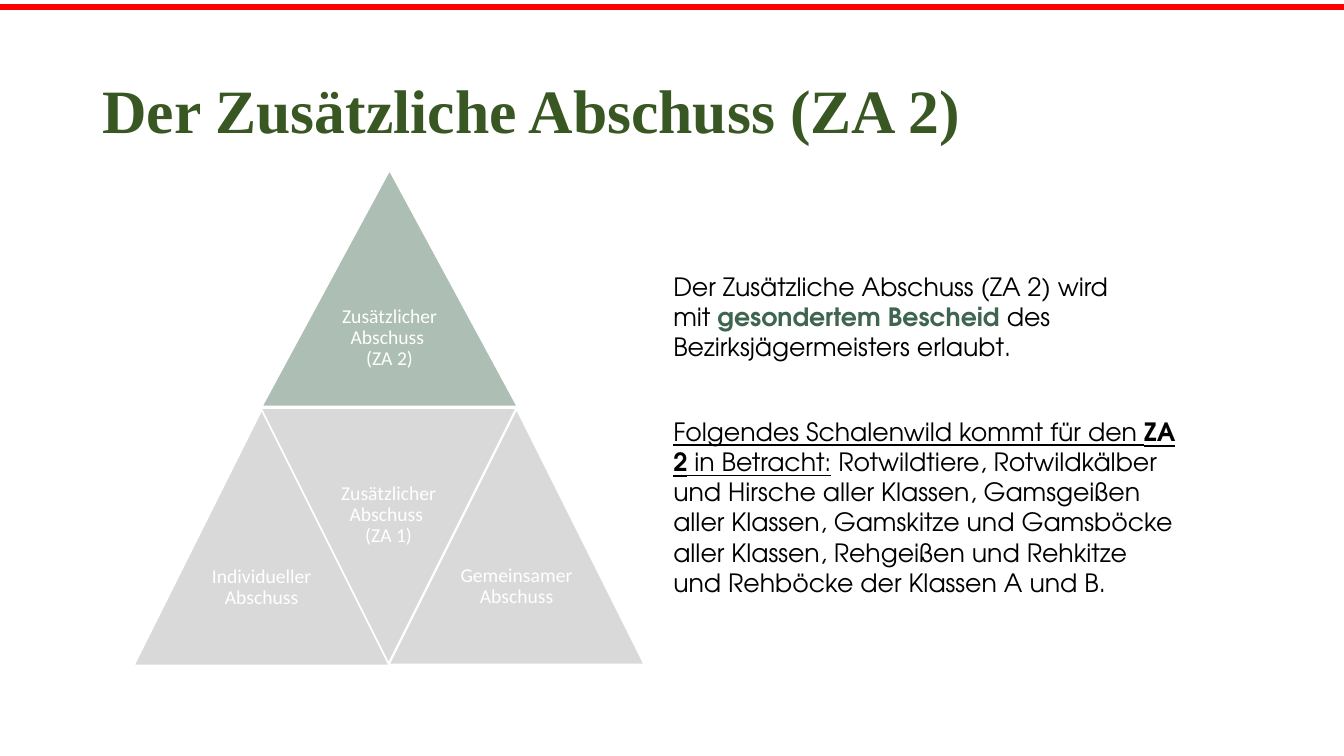
import dataclasses

import pptx
import pptx.dml.color
import pptx.enum.shapes
import pptx.enum.text
import pptx.oxml
import pptx.oxml.ns
import pptx.util

Pt = pptx.util.Pt
RGB = pptx.dml.color.RGBColor.from_string
Align = pptx.enum.text.PP_ALIGN
Anchor = pptx.enum.text.MSO_ANCHOR


@dataclasses.dataclass(frozen=True)
class Theme:
    title_font: str = "Times New Roman"
    body_font: str = "TeX Gyre Adventor"
    label_font: str = "Calibri"
    title_size: float = 44
    body_size: float = 18
    label_size: float = 14
    title: str = "385723"
    body: str = "000000"
    accent: str = "3E654F"
    rule: str = "FF0000"
    active: str = "ADBEB4"
    inactive: str = "D9D9D9"
    white: str = "FFFFFF"


def apply(target, values):
    for name, value in values.items():
        setattr(target, name, value)


class SlideBuilder:
    def __init__(self, slide, theme):
        self.shapes = slide.shapes
        self.theme = theme

    def rule(self, x1, y1, x2, y2, color, width):
        line = self.shapes.add_connector(
            pptx.enum.shapes.MSO_CONNECTOR.STRAIGHT, Pt(x1), Pt(y1), Pt(x2), Pt(y2))
        line.line.color.rgb = RGB(color)
        line.line.width = Pt(width)
        effects = pptx.oxml.parse_xml(f"<a:effectLst {pptx.oxml.ns.nsdecls('a')}/>")
        line._element.spPr.append(effects)

    def paragraph(self, paragraph, runs, font, color, layout):
        """Each run is (text, font changes, colour or None); newline means line break."""
        apply(paragraph, layout)
        for text, changes, run_color in runs:
            for index, part in enumerate(text.split("\n")):
                if index:
                    paragraph.add_line_break()
                run = paragraph.add_run()
                run.text = part
                apply(run.font, {**font, **changes})
                run.font.color.rgb = RGB(run_color or color)

    def text(self, box, paragraphs, font, color, frame):
        """Each paragraph is (runs, layout)."""
        area = self.shapes.add_textbox(*map(Pt, box)).text_frame
        apply(area, {"word_wrap": True, **frame})
        for index, (runs, layout) in enumerate(paragraphs):
            target = area.add_paragraph() if index else area.paragraphs[0]
            self.paragraph(target, runs, font, color, layout)

    def triangle(self, left, top, width, height, label, fill, label_top, inverted=False):
        base, tip = (top, top + height) if inverted else (top + height, top)
        outline = self.shapes.build_freeform(Pt(left), Pt(base))
        outline.add_line_segments(
            [(Pt(left + width / 2), Pt(tip)), (Pt(left + width), Pt(base))], close=True)
        shape = outline.convert_to_shape()
        shape.shadow.inherit = False
        shape.fill.solid()
        shape.fill.fore_color.rgb = RGB(fill)
        shape.line.color.rgb = RGB(self.theme.white)
        shape.line.width = Pt(1)
        apply(shape.text_frame, {
            "word_wrap": True, "vertical_anchor": Anchor.TOP,
            "margin_left": Pt(49.7), "margin_right": Pt(49.7),
            "margin_top": Pt(label_top), "margin_bottom": Pt(0)})
        self.paragraph(
            shape.text_frame.paragraphs[0], [(label, {}, None)],
            {"name": self.theme.label_font, "size": Pt(self.theme.label_size)},
            self.theme.white, {"alignment": Align.CENTER, "line_spacing": 0.9})


def main():
    deck = pptx.Presentation()
    apply(deck, {"slide_width": Pt(960), "slide_height": Pt(540)})
    theme = Theme()
    builder = SlideBuilder(deck.slides.add_slide(deck.slide_layouts[6]), theme)

    # Red rule and title
    builder.rule(0, 5, 960, 5, theme.rule, 4.5)
    builder.text(
        (66, 28.8, 828, 104.4),
        [([("Der Zusätzliche Abschuss (ZA 2)", {}, None)], {"line_spacing": 0.9})],
        {"name": theme.title_font, "size": Pt(theme.title_size), "bold": True},
        theme.title, {"vertical_anchor": Anchor.MIDDLE})

    # Explanation
    permit = [
        ("Der Zusätzliche Abschuss (ZA 2) wird \nmit ", {}, None),
        ("gesondertem Bescheid ", {"bold": True}, theme.accent),
        ("des Bezirksjägermeisters erlaubt.", {}, None)]
    game = [
        ("Folgendes Schalenwild kommt für den ", {"underline": True}, None),
        ("ZA 2", {"underline": True, "bold": True}, None),
        (" in Betracht:", {"underline": True}, None),
        (" Rotwildtiere, Rotwildkälber und Hirsche aller Klassen, Gamsgeißen aller "
         "Klassen, Gamskitze und Gamsböcke aller Klassen, Rehgeißen und Rehkitze "
         "und Rehböcke der Klassen A und B.", {}, None)]
    builder.text(
        (473.8, 190.1, 375.1, 264.2),
        [(permit, {}), (game, {"space_before": Pt(38.7)})],
        {"name": theme.body_font, "size": Pt(theme.body_size)},
        theme.body, {"vertical_anchor": Anchor.TOP})

    # Pyramid of the four kinds of Abschuss
    side = 182.2
    builder.triangle(187.2, 121.7, side, 168.5, "Zusätzlicher Abschuss \n(ZA 2)",
                     theme.active, 97.2)
    lower_row = [
        (95.8, 293, "Individueller Abschuss", 111.8, False),
        (186.5, 291.6, "Zusätzlicher Abschuss \n(ZA 1)", 53.8, True),
        (277.9, 292.3, "Gemeinsamer Abschuss", 111.8, False)]
    for left, top, label, label_top, inverted in lower_row:
        builder.triangle(left, top, side, side, label, theme.inactive, label_top, inverted)

    deck.save("out.pptx")


if __name__ == "__main__":
    main()
